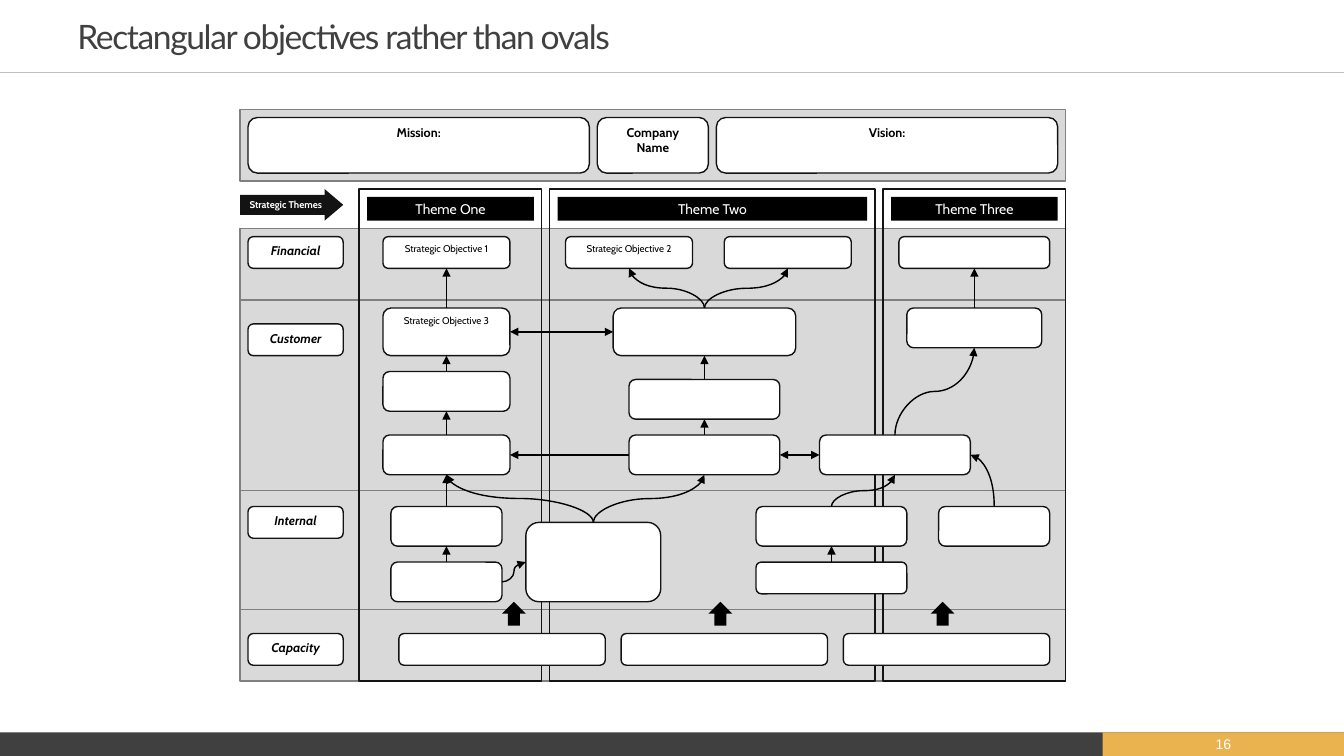
import pptx
import pptx.dml.color
import pptx.enum.shapes
import pptx.enum.text
import pptx.oxml
import pptx.oxml.ns
import pptx.util
from dataclasses import dataclass

Pt = pptx.util.Pt
Shape = pptx.enum.shapes.MSO_SHAPE
Line = pptx.enum.shapes.MSO_CONNECTOR
Align = pptx.enum.text.PP_ALIGN
Anchor = pptx.enum.text.MSO_ANCHOR

# Content: places in the map are in grid units (left, top, width, height)
TITLE = "Rectangular objectives rather than ovals"
PAGE_NUMBER = "16"
BANNER = [("Mission:", (1, 1, 43, 7)), ("Vision:", (60, 1, 43, 7)),
          ("Company Name", (45, 1, 14, 7))]
# Perspective, lane top, lane height, label offset within the lane
LANES = [("Financial", 15, 9, 1), ("Customer", 24, 24, 3),
         ("Internal", 48, 15, 2), ("Capacity", 63, 9, 3)]
THEMES = [("Theme One", 15, 23), ("Theme Two", 39, 41), ("Theme Three", 81, 23)]
OBJECTIVES = {
    "one financial": (18, 16, 16, 4), "two financial left": (41, 16, 16, 4),
    "two financial right": (61, 16, 16, 4), "three financial": (83, 16, 19, 4),
    "one customer top": (18, 25, 16, 6), "one customer middle": (18, 33, 16, 5),
    "one customer low": (18, 41, 16, 5), "two customer top": (47, 25, 23, 6),
    "two customer middle": (49, 34, 19, 5), "two customer low": (49, 41, 19, 5),
    "three customer low": (73, 41, 19, 5), "three customer top": (84, 25, 17, 5),
    "one internal top": (19, 50, 14, 5), "shared internal": (36, 52, 17, 10),
    "one internal low": (19, 57, 14, 5), "three internal top": (65, 50, 19, 5),
    "three internal low": (65, 57, 19, 4), "three internal right": (88, 50, 14, 5),
    "capacity left": (20, 66, 26, 4), "capacity middle": (48, 66, 26, 4),
    "capacity right": (76, 66, 26, 4),
}
OBJECTIVE_TEXT = {"one financial": "Strategic Objective 1",
                  "two financial left": "Strategic Objective 2",
                  "one customer top": "Strategic Objective 3"}
# From, to: each rises from the top of one box to the bottom of the next
RISING = [
    ("one customer low", "one customer middle"), ("one customer middle", "one customer top"),
    ("one customer top", "one financial"), ("two customer low", "two customer middle"),
    ("two customer middle", "two customer top"), ("two customer top", "two financial left"),
    ("two customer top", "two financial right"), ("three customer top", "three financial"),
    ("three customer low", "three customer top"), ("shared internal", "two customer low"),
    ("shared internal", "one customer low"), ("three internal top", "three customer low"),
    ("three internal low", "three internal top"), ("one internal top", "one customer low"),
    ("one internal low", "one internal top"),
]
# From, to, arrowheads at both ends: each runs from a left side to a right side
SIDEWAYS = [("two customer low", "one customer low", False),
            ("two customer top", "one customer top", True),
            ("three customer low", "two customer low", True)]
CAPACITY_ARROWS = [33, 59, 87]


@dataclass(frozen=True)
class Theme:
    dark: str = "404040"
    accent: str = "EBB250"
    rule: str = "BFBFBF"
    lane: str = "D9D9D9"
    lane_edge: str = "808080"
    ink: str = "131313"
    black: str = "000000"
    white: str = "FFFFFF"
    title_font: str = "Lato"
    map_font: str = "Cabin"
    number_font: str = "Arial"
    title_size: float = 24
    theme_size: float = 10
    label_size: float = 9
    small_size: float = 7


theme = Theme()
UNIT, MAP_LEFT, MAP_TOP, MAP_WIDTH = 5.67, 171.5, 78.3, 104
SLIDE_WIDTH, SLIDE_HEIGHT = 960, 540
TOP, LEFT, BOTTOM, RIGHT = range(4)

deck = pptx.Presentation()
deck.slide_width, deck.slide_height = Pt(SLIDE_WIDTH), Pt(SLIDE_HEIGHT)
page = deck.slides.add_slide(deck.slide_layouts[6])


def color(code):
    return pptx.dml.color.RGBColor.from_string(code)


def on_map(left, top, width, height):
    return (MAP_LEFT + left * UNIT, MAP_TOP + top * UNIT, width * UNIT, height * UNIT)


def write(box, text, size, ink, font=theme.map_font, bold=False, italic=False,
          align=Align.CENTER, anchor=Anchor.TOP, insets=(7.2, 3.6), spacing=0):
    frame = box.text_frame
    frame.word_wrap = True
    frame.vertical_anchor = anchor
    frame.margin_left = frame.margin_right = Pt(insets[0])
    frame.margin_top = frame.margin_bottom = Pt(insets[1])
    para = frame.paragraphs[0]
    para.alignment = align
    span = para.add_run()
    span.text = text
    span.font.name, span.font.size = font, Pt(size)
    span.font.bold, span.font.italic = bold, italic
    span.font.color.rgb = color(ink)
    if spacing:
        span.font._element.set("spc", str(spacing * 100))


def add_box(place, fill=None, edge=None, kind=Shape.RECTANGLE):
    box = page.shapes.add_shape(kind, *map(Pt, place))
    box.shadow.inherit = False
    if fill:
        box.fill.solid()
        box.fill.fore_color.rgb = color(fill)
    else:
        box.fill.background()
    if edge:
        box.line.color.rgb = color(edge)
        box.line.width = Pt(1)
    else:
        box.line.fill.background()
    return box


def add_card(place):
    return add_box(on_map(*place), theme.white, theme.ink, Shape.ROUNDED_RECTANGLE)


def add_line(start, end, ink, kind=Line.STRAIGHT, heads=()):
    line = page.shapes.add_connector(kind, *map(Pt, start + end))
    line.line.color.rgb = color(ink)
    line.line.width = Pt(1)
    for head in heads:
        pptx.oxml.ns.qn("a:ln")
        edge = line.line._get_or_add_ln()
        edge.append(edge.makeelement(pptx.oxml.ns.qn("a:" + head), {"type": "triangle"}))
    properties = line._element.spPr
    properties.append(properties.makeelement(pptx.oxml.ns.qn("a:effectLst"), {}))
    return line


def side_point(place, side):
    left, top, width, height = on_map(*place)
    across, down = {TOP: (0.5, 0), LEFT: (0, 0.5), BOTTOM: (0.5, 1), RIGHT: (1, 0.5)}[side]
    return (left + across * width, top + down * height)


def link(source, target, leave=TOP, arrive=BOTTOM, both=False):
    (x0, y0), (x1, y1) = (side_point(OBJECTIVES[source], leave),
                          side_point(OBJECTIVES[target], arrive))
    straight = abs(x1 - x0) < 0.1 or abs(y1 - y0) < 0.1
    turned = leave == TOP and not straight
    start, end = (x0, y0), (x1, y1)
    if turned:  # a curve leaving upwards is a rightward one turned by 270 degrees
        middle_x, middle_y, rise, run = (x0 + x1) / 2, (y0 + y1) / 2, y0 - y1, x1 - x0
        start = (middle_x - rise / 2, middle_y - run / 2)
        end = (middle_x + rise / 2, middle_y + run / 2)
    line = add_line(start, end, theme.black, Line.STRAIGHT if straight else Line.CURVE,
                    ("headEnd", "tailEnd") if both else ("tailEnd",))
    properties = line._element.spPr
    if turned:
        properties.xfrm.set("rot", str(270 * 60000))
    if turned and arrive == RIGHT:
        properties.find(pptx.oxml.ns.qn("a:prstGeom")).set("prst", "curvedConnector2")


# Title, rule and footer
heading = page.shapes.add_textbox(Pt(48.2), Pt(2.9), Pt(700), Pt(45.4))
write(heading, TITLE, theme.title_size, theme.dark, font=theme.title_font,
      align=Align.LEFT, anchor=Anchor.MIDDLE, insets=(7.2, 0), spacing=-1)
add_line((0, 51.8), (SLIDE_WIDTH, 51.8), theme.rule)
add_box((0, 523.2, SLIDE_WIDTH, 17), theme.dark)
number = add_box((787.7, 523.2, 172.3, 17), theme.accent)
write(number, PAGE_NUMBER, theme.theme_size, theme.white, font=theme.number_font,
      anchor=Anchor.MIDDLE, insets=(7.2, 0))

# Banner, lanes and theme columns
for lane_top, lane_height in [(0, 9)] + [lane[1:3] for lane in LANES]:
    add_box(on_map(0, lane_top, MAP_WIDTH, lane_height), theme.lane, theme.lane_edge)
for name, left, width in THEMES:
    add_box(on_map(left, 10, width, 62), edge=theme.ink)
for text, place in BANNER:
    write(add_card(place), text, theme.label_size, theme.black, bold=True)
for text, lane_top, lane_height, offset in LANES:
    write(add_card((1, lane_top + offset, 12, 4)), text, theme.label_size, theme.black,
          bold=True, italic=True)

# Objectives
for name, place in OBJECTIVES.items():
    card = add_card(place)
    if name in OBJECTIVE_TEXT:
        write(card, OBJECTIVE_TEXT[name], theme.small_size, theme.black, insets=(2.9, 2.9))

# Theme headers
pointer = add_box(on_map(0, 10, 13, 4), theme.ink, kind=Shape.RIGHT_ARROW)
pointer.adjustments[0], pointer.adjustments[1] = 0.63, 0.59
write(pointer, "Strategic Themes", theme.small_size, theme.white, bold=True,
      anchor=Anchor.MIDDLE, insets=(0, 3.6))
for text, left, width in THEMES:
    write(add_box(on_map(left + 1, 11, width - 2, 3), theme.black), text,
          theme.theme_size, theme.white, anchor=Anchor.MIDDLE)

# Links between objectives
for source, target in RISING:
    link(source, target)
for source, target, both in SIDEWAYS:
    link(source, target, LEFT, RIGHT, both)
link("three internal right", "three customer low", TOP, RIGHT)
link("one internal low", "shared internal", RIGHT, LEFT)

# Block arrows rising from capacity
for left in CAPACITY_ARROWS:
    arrow = add_box(on_map(left, 62, 3, 3), theme.black, kind=Shape.RIGHT_ARROW)
    arrow.rotation = 270

deck.save("out.pptx")
